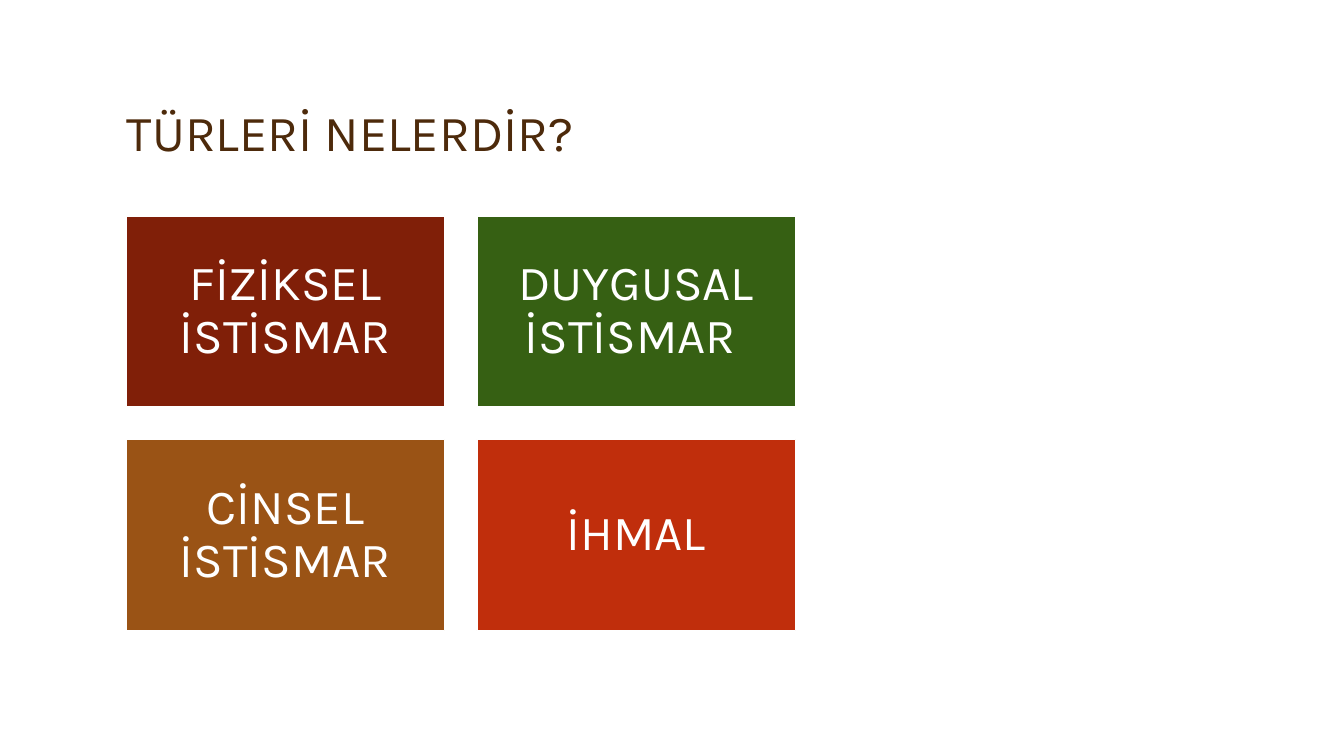
"""Build the slide that names the four kinds of abuse."""
from dataclasses import dataclass

from pptx import Presentation
from pptx.dml.color import RGBColor
from pptx.enum.shapes import MSO_SHAPE
from pptx.enum.text import MSO_ANCHOR, PP_ALIGN
from pptx.shapes.autoshape import Shape
from pptx.slide import Slide
from pptx.util import Cm, Pt

LEFT, TOP = 3.18, 5.44
WIDTH, HEIGHT = 8.03, 4.82
GAP = 0.81
COLUMNS = 2
WHITE = "FFFFFF"


@dataclass(frozen=True)
class Tile:
    text: str
    fill: str


TILES = [
    Tile("FİZİKSEL İSTİSMAR", "801F08"),
    Tile("DUYGUSAL İSTİSMAR ", "366013"),
    Tile("CİNSEL İSTİSMAR", "9A5315"),
    Tile("İHMAL", "C02E0C"),
]


def rgb(value: str) -> RGBColor:
    """Turn a hex string into a colour."""
    return RGBColor.from_string(value)


def write(sp: Shape, text: str, size: int, color: str,
          align: PP_ALIGN, frame: dict) -> None:
    """Put one formatted paragraph into a shape."""
    tf = sp.text_frame
    for name, value in {"word_wrap": True, **frame}.items():
        setattr(tf, name, value)
    p = tf.paragraphs[0]
    for name, value in {"alignment": align, "line_spacing": 0.9}.items():
        setattr(p, name, value)
    r = p.add_run()
    r.text = text
    for name, value in {"name": "Karla", "size": Pt(size)}.items():
        setattr(r.font, name, value)
    r.font.color.rgb = rgb(color)


def add_title(slide: Slide) -> None:
    """Add the heading above the tiles."""
    sp = slide.shapes.add_textbox(Cm(2.95), Cm(0.84), Cm(27.94), Cm(3.38))
    write(sp, "TÜRLERİ NELERDİR?", 36, "4D2A0B", PP_ALIGN.LEFT,
          {"vertical_anchor": MSO_ANCHOR.BOTTOM})


def add_tile(slide: Slide, tile: Tile, row: int, column: int) -> None:
    """Add one coloured tile at its place in the grid."""
    x = LEFT + column * (WIDTH + GAP)
    y = TOP + row * (HEIGHT + GAP)
    sp = slide.shapes.add_shape(MSO_SHAPE.RECTANGLE, Cm(x), Cm(y), Cm(WIDTH), Cm(HEIGHT))
    sp.shadow.inherit = False
    sp.fill.solid()
    sp.fill.fore_color.rgb = rgb(tile.fill)
    sp.line.color.rgb = rgb(WHITE)
    sp.line.width = Pt(1)
    margins = {f"margin_{side}": Cm(0.38) for side in ("left", "top", "right", "bottom")}
    write(sp, tile.text, 35, WHITE, PP_ALIGN.CENTER,
          {"vertical_anchor": MSO_ANCHOR.MIDDLE, **margins})


def main() -> None:
    """Create and save the presentation."""
    prs = Presentation()
    prs.slide_width, prs.slide_height = Cm(33.87), Cm(19.05)
    slide = prs.slides.add_slide(prs.slide_layouts[6])
    add_title(slide)
    for i, tile in enumerate(TILES):
        add_tile(slide, tile, *divmod(i, COLUMNS))
    prs.save("out.pptx")


if __name__ == "__main__":
    main()
